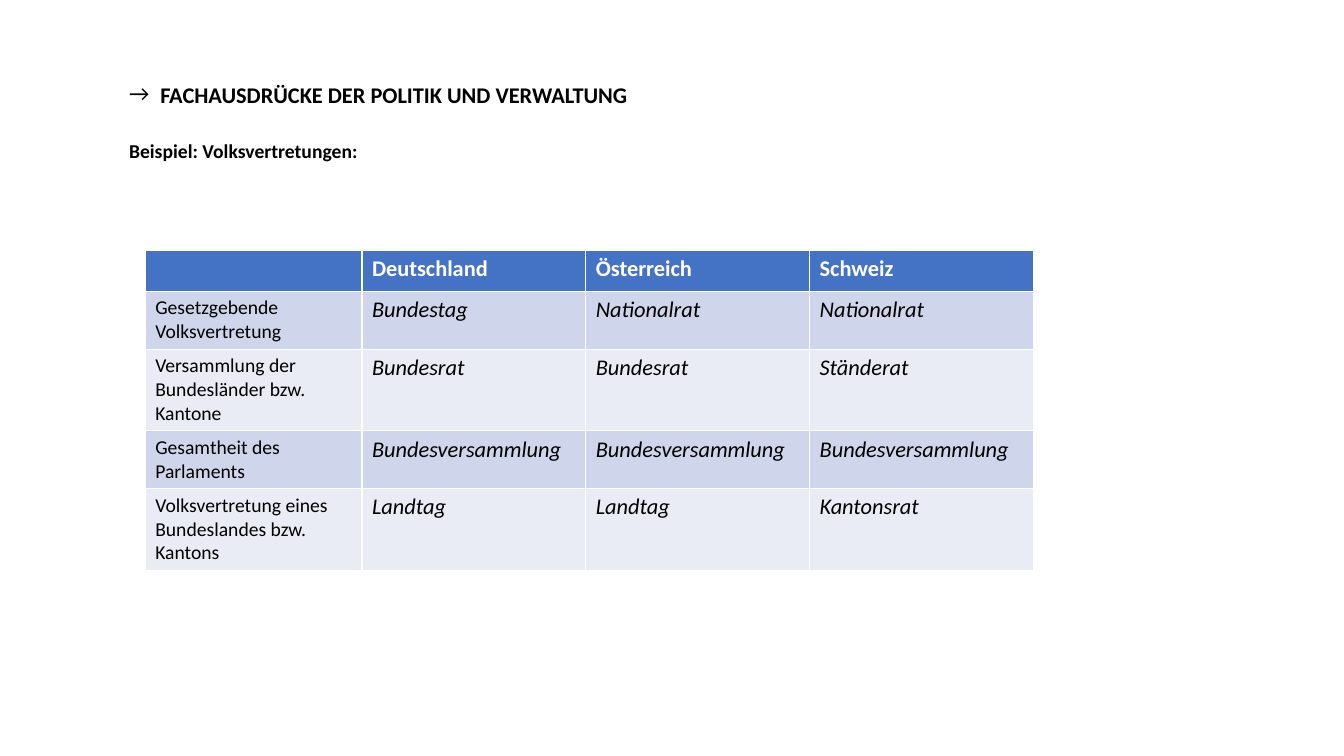
from lxml.etree import SubElement
from pptx import Presentation
from pptx.dml.color import RGBColor
from pptx.enum.text import MSO_ANCHOR, MSO_AUTO_SIZE, PP_ALIGN
from pptx.oxml.ns import qn
from pptx.util import Inches, Pt

HEADING = "FACHAUSDRÜCKE DER POLITIK UND VERWALTUNG"
EXAMPLE = "Beispiel: Volksvertretungen:"
COUNTRIES = ["", "Deutschland", "Österreich", "Schweiz"]
ASSEMBLIES = [
    ["Gesetzgebende Volksvertretung", "Bundestag", "Nationalrat", "Nationalrat"],
    ["Versammlung der Bundesländer bzw. Kantone", "Bundesrat", "Bundesrat", "Ständerat"],
    ["Gesamtheit des Parlaments"] + ["Bundesversammlung"] * 3,
    ["Volksvertretung eines Bundeslandes bzw. Kantons", "Landtag", "Landtag", "Kantonsrat"],
]

COLORS = {"text": "000000", "header": "4472C4", "header_text": "FFFFFF",
          "odd": "CFD5EA", "even": "E9EBF5"}
FONT = "Calibri"
SLIDE_SIZE = (13.33, 7.5)
TEXT_LEFT, TEXT_WIDTH = 1.18, 5.22
BULLET_INDENT = 0.31
TABLE_LEFT, TABLE_TOP = 1.44, 2.48
COLUMN_WIDTHS = [2.15] + [2.22] * 3
ROW_HEIGHTS = [0.41] + [0.57, 0.8] * 2

HEADER = {"size": Pt(16), "bold": True, "italic": False}
ROLE = {"size": Pt(14), "bold": False, "italic": False}
TERM = {"size": Pt(16), "bold": False, "italic": True}


def write(frame, text, style, color):
    frame.text = text
    paragraph = frame.paragraphs[0]
    font = paragraph.runs[0].font if paragraph.runs else paragraph.font
    for name, value in {**style, "name": FONT}.items():
        setattr(font, name, value)
    font.color.rgb = RGBColor.from_string(COLORS[color])
    return paragraph


def place_line(holder, text, style, top, height, indent=0, bullet=None):
    """Turn a placeholder into one left-aligned line, with an optional bullet."""
    box = {"left": TEXT_LEFT, "top": top, "width": TEXT_WIDTH, "height": height}
    for name, value in box.items():
        setattr(holder, name, Inches(value))
    frame = holder.text_frame
    layout = {"word_wrap": False, "auto_size": MSO_AUTO_SIZE.NONE,
              "vertical_anchor": MSO_ANCHOR.TOP}
    for name, value in layout.items():
        setattr(frame, name, value)
    paragraph = write(frame, text, style, "text")
    paragraph.alignment = PP_ALIGN.LEFT
    paragraph.space_before = Pt(0)
    props = paragraph._p.get_or_add_pPr()
    props.set("marL", str(Inches(indent)))
    props.set("indent", str(-Inches(indent)))
    if bullet:
        SubElement(props, qn("a:buFont"), typeface=FONT)
        SubElement(props, qn("a:buChar"), char=bullet)
    else:
        SubElement(props, qn("a:buNone"))


def add_assembly_table(slide):
    rows = [COUNTRIES] + ASSEMBLIES
    table = slide.shapes.add_table(
        len(rows), len(COUNTRIES), Inches(TABLE_LEFT), Inches(TABLE_TOP),
        Inches(sum(COLUMN_WIDTHS)), Inches(sum(ROW_HEIGHTS))).table
    for column, width in zip(table.columns, COLUMN_WIDTHS):
        column.width = Inches(width)
    for r, (texts, height) in enumerate(zip(rows, ROW_HEIGHTS)):
        table.rows[r].height = Inches(height)
        fill = "header" if r == 0 else "odd" if r % 2 else "even"
        for c, text in enumerate(texts):
            cell = table.cell(r, c)
            cell.fill.solid()
            cell.fill.fore_color.rgb = RGBColor.from_string(COLORS[fill])
            style = HEADER if r == 0 else TERM if c else ROLE
            write(cell.text_frame, text, style, "header_text" if r == 0 else "text")


def main():
    deck = Presentation()
    deck.slide_width, deck.slide_height = map(Inches, SLIDE_SIZE)
    slide = deck.slides.add_slide(deck.slide_layouts[1])
    heading, example = slide.placeholders
    place_line(heading, HEADING, HEADER, 0.75, 0.37, BULLET_INDENT, "→")
    place_line(example, EXAMPLE, {**ROLE, "bold": True}, 1.33, 0.34)
    add_assembly_table(slide)
    deck.save("out.pptx")


if __name__ == "__main__":
    main()
